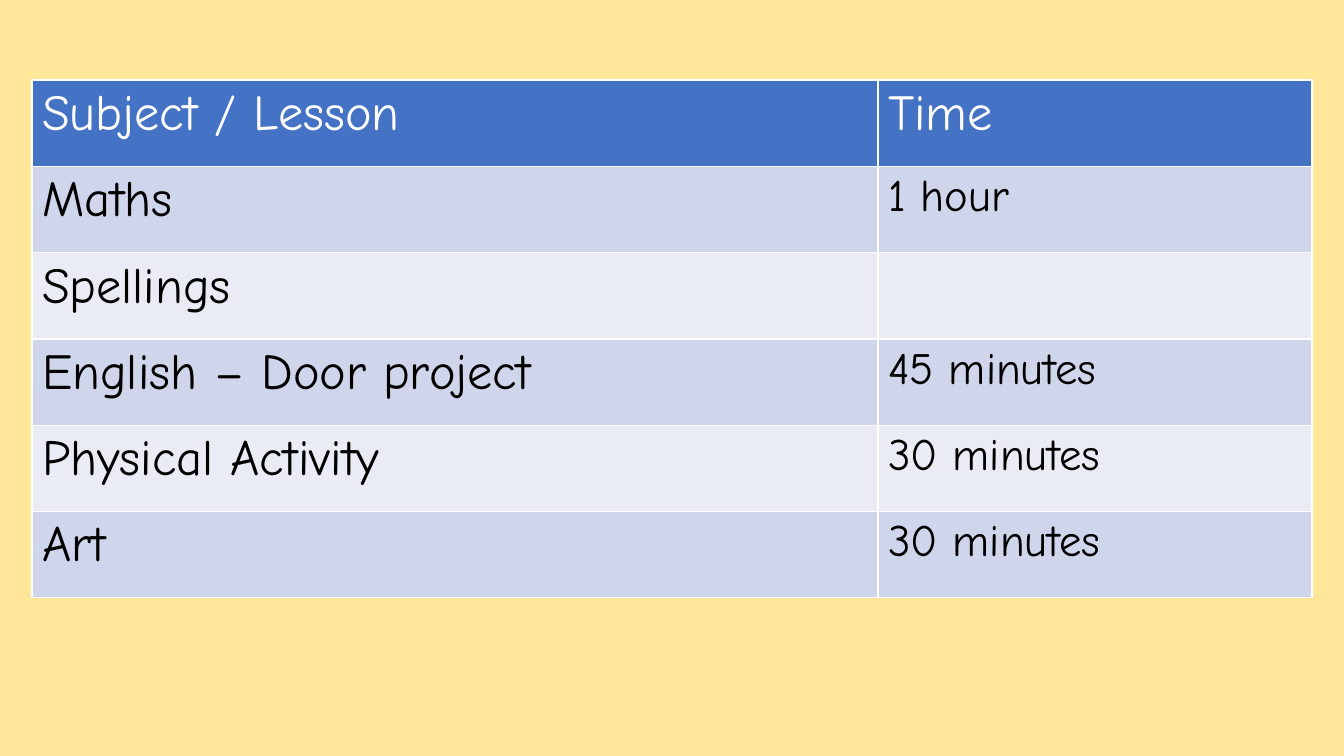
from pptx import Presentation
from pptx.dml.color import RGBColor
from pptx.util import Pt

PX = 914400 / 100.8  # EMU in one px
FONT = "Comic Neue"

CREAM = RGBColor(0xFF, 0xE6, 0x99)
BLUE = RGBColor(0x44, 0x72, 0xC4)
BAND_DARK = RGBColor(0xCF, 0xD5, 0xEA)
BAND_LIGHT = RGBColor(0xE9, 0xEB, 0xF5)
WHITE = RGBColor(0xFF, 0xFF, 0xFF)
BLACK = RGBColor(0x00, 0x00, 0x00)

LESSONS = [
    ("Subject / Lesson", "Time"),
    ("Maths", "1 hour"),
    ("Spellings", ""),
    ("English – Door project", "45 minutes"),
    ("Physical Activity", "30 minutes"),
    ("Art", "30 minutes"),
]


def px(length):
    return round(length * PX)


def write_text(frame, text, size, color, bold=False):
    span = frame.paragraphs[0].add_run()
    span.text = text
    span.font.name = FONT
    span.font.size = Pt(size)
    span.font.bold = bold
    span.font.color.rgb = color


def add_timetable(page, left, top, width, height, subject_width):
    """Place the timetable; its default style draws the white cell borders."""
    box = [px(length) for length in (left, top, width, height)]
    table = page.shapes.add_table(len(LESSONS), 2, *box).table
    table.columns[0].width = px(subject_width)
    table.columns[1].width = px(width - subject_width)

    for row, texts in enumerate(LESSONS):
        table.rows[row].height = px(height / len(LESSONS))
        is_header = row == 0
        band = BAND_DARK if row % 2 else BAND_LIGHT
        for column, text in enumerate(texts):
            cell = table.cell(row, column)
            cell.fill.solid()
            cell.fill.fore_color.rgb = BLUE if is_header else band
            if text:
                write_text(cell.text_frame, text,
                           size=36 if is_header or column == 0 else 32,
                           color=WHITE if is_header else BLACK)


def main():
    deck = Presentation()
    deck.slide_width, deck.slide_height = px(1344), px(756)
    page = deck.slides.add_slide(deck.slide_layouts[6])

    # Background
    page.background.fill.solid()
    page.background.fill.fore_color.rgb = CREAM

    # Timetable
    add_timetable(page, 32, 80, 1280, 518, subject_width=846)

    deck.save("out.pptx")


if __name__ == "__main__":
    main()
